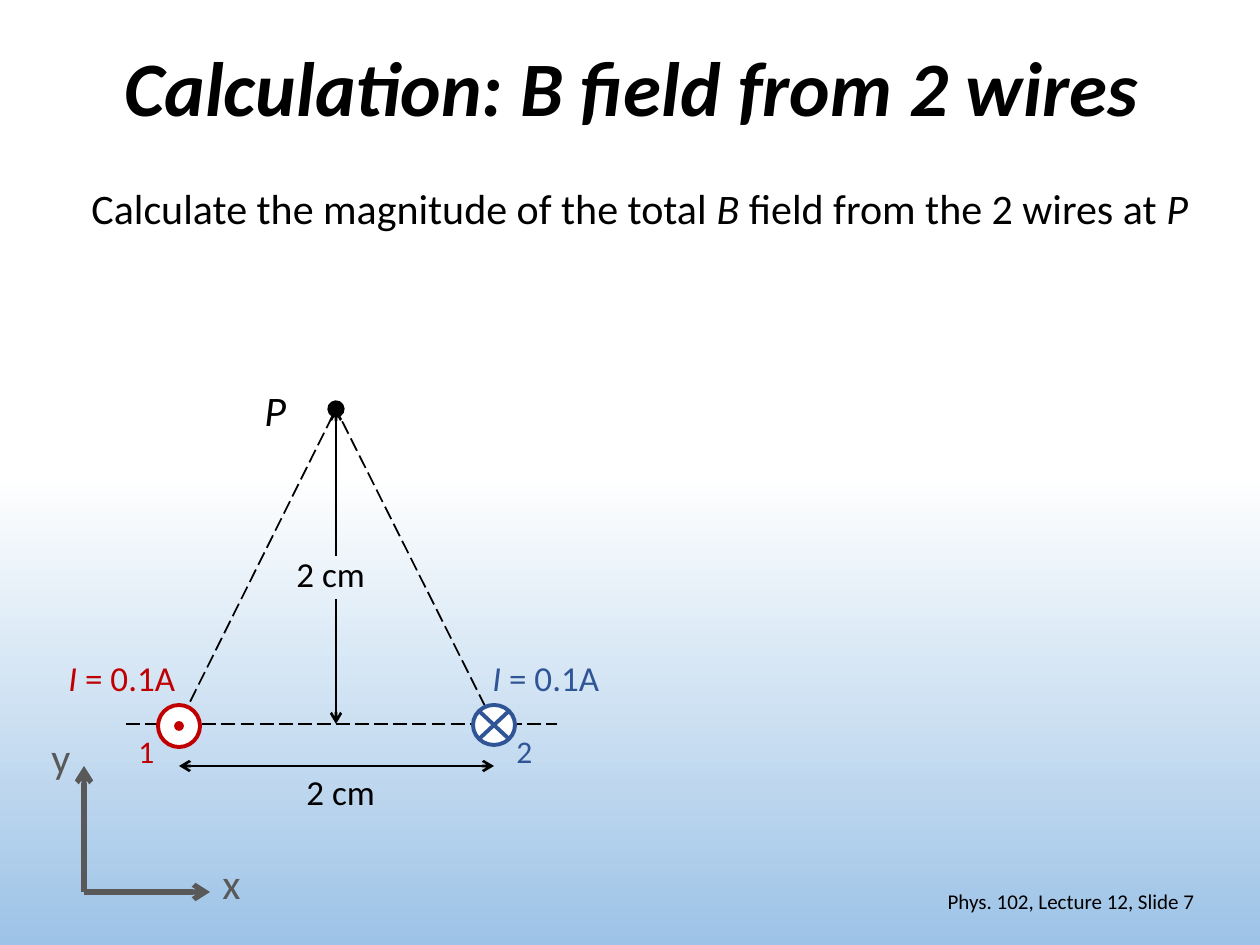
from lxml import etree
from pptx import Presentation
from pptx.dml.color import RGBColor
from pptx.enum.dml import MSO_LINE
from pptx.enum.shapes import MSO_CONNECTOR, MSO_SHAPE
from pptx.enum.text import MSO_ANCHOR, MSO_AUTO_SIZE, PP_ALIGN
from pptx.oxml.ns import qn
from pptx.util import Emu, Pt

STRAIGHT = MSO_CONNECTOR.STRAIGHT
OVAL = MSO_SHAPE.OVAL
LONG_DASH = MSO_LINE.LONG_DASH
MIDDLE = MSO_ANCHOR.MIDDLE
CENTER, RIGHT = PP_ALIGN.CENTER, PP_ALIGN.RIGHT
FIT_SHAPE = MSO_AUTO_SIZE.SHAPE_TO_FIT_TEXT

BLACK = RGBColor(0x00, 0x00, 0x00)
WHITE = RGBColor(0xFF, 0xFF, 0xFF)
SKY = RGBColor(0x9D, 0xC3, 0xE6)
RED = RGBColor(0xC0, 0x00, 0x00)
BLUE = RGBColor(0x2F, 0x55, 0x97)
GRAY = RGBColor(0x59, 0x59, 0x59)

FONT = "Calibri"
EMU_PER_PX = 914400 / 126

# Geometry of the problem, in px
WIRE_1_X, WIRE_2_X, WIRE_Y = 179, 494, 724
P_X, P_Y = (WIRE_1_X + WIRE_2_X) // 2, 409
ORIGIN_X, ORIGIN_Y, AXIS = 84, 892, 126


def px(n):
    return Emu(round(n * EMU_PER_PX))


def add_runs(p, runs, size, color, bold=None):
    """Each run is a pair of text and italic flag."""
    for text, italic in runs:
        r = p.add_run()
        r.text = text
        r.font.name = FONT
        r.font.size = Pt(size)
        r.font.color.rgb = color
        r.font.bold = bold
        r.font.italic = italic


def add_label(shapes, x, y, w, h, runs, size, color=BLACK):
    box = shapes.add_textbox(px(x), px(y), px(w), px(h))
    tf = box.text_frame
    tf.word_wrap = False
    tf.auto_size = FIT_SHAPE
    add_runs(tf.paragraphs[0], runs, size, color)


def add_line(shapes, start, end, color=BLACK, width=1, dash=None,
             head=None, tail=None, end_size="med"):
    line = shapes.add_connector(STRAIGHT, *map(px, start + end))
    line.line.color.rgb = color
    line.line.width = Pt(width)
    if dash:
        line.line.dash_style = dash
    sp_pr = line._element.spPr
    ln = sp_pr.find(qn("a:ln"))
    for tag, kind in (("a:headEnd", head), ("a:tailEnd", tail)):
        if kind:
            etree.SubElement(ln, qn(tag), type=kind, w=end_size, len=end_size)
    etree.SubElement(sp_pr, qn("a:effectLst"))


def add_circle(shapes, x, y, w, h, fill, color, width):
    s = shapes.add_shape(OVAL, px(x), px(y), px(w), px(h))
    s.shadow.inherit = False
    s.fill.solid()
    s.fill.fore_color.rgb = fill
    s.line.color.rgb = color
    s.line.width = Pt(width)


def add_background(slide):
    fill = slide.background.fill
    fill.gradient()
    fill.gradient_angle = 270
    for stop, position, color in zip(fill.gradient_stops, (0.5, 1), (WHITE, SKY)):
        stop.position = position
        stop.color.rgb = color


def add_title(slide, text):
    title = slide.shapes.title
    title.left, title.top, title.width, title.height = map(px, (89, 0, 1086, 183))
    tf = title.text_frame
    tf.word_wrap = True
    tf.vertical_anchor = MIDDLE
    p = tf.paragraphs[0]
    p.alignment = CENTER
    p.line_spacing = 0.9
    add_runs(p, [(text, True)], 44, BLACK, bold=True)


def add_footer(shapes, text):
    box = shapes.add_textbox(px(890), px(876), px(317), px(50))
    tf = box.text_frame
    tf.word_wrap = True
    tf.vertical_anchor = MIDDLE
    p = tf.paragraphs[0]
    p.alignment = RIGHT
    add_runs(p, [(text, False)], 12, BLACK)


def add_wire(slide, x, label_x, height, color):
    """Current label and wire circle; returns the group's shapes."""
    shapes = slide.shapes.add_group_shape().shapes
    add_label(shapes, label_x, 650, 134, 55, [("I ", True), ("= 0.1A", False)], 20, color)
    add_circle(shapes, x - 21, 705, 42, height, WHITE, color, 2.25)
    return shapes


def main():
    prs = Presentation()
    prs.slide_width, prs.slide_height = px(1260), px(945)
    slide = prs.slides.add_slide(prs.slide_layouts[5])
    shapes = slide.shapes
    add_background(slide)

    # Title and task
    add_title(slide, "Calculation: B field from 2 wires")
    add_label(shapes, 79, 176, 1131, 63,
              [("Calculate the magnitude of the total ", False), ("B", True),
               (" field from the 2 wires at ", False), ("P", True)], 24)

    # Dashed triangle with its apex at P
    apex = (P_X, P_Y)
    add_line(shapes, (126, WIRE_Y), (557, WIRE_Y), dash=LONG_DASH)
    add_line(shapes, (WIRE_2_X, WIRE_Y), apex, dash=LONG_DASH)
    add_line(shapes, apex, (WIRE_1_X, WIRE_Y), dash=LONG_DASH, head="oval", end_size="lg")

    # Wire 1: current out of the page
    wire_1 = add_wire(slide, WIRE_1_X, 56, 42, RED)
    add_circle(wire_1, WIRE_1_X - 4, 722, 8, 8, RED, RED, 1)

    # Wire 2: current into the page
    wire_2 = add_wire(slide, WIRE_2_X, 480, 40, BLUE)
    for dy in (-14, 14):
        add_line(wire_2, (WIRE_2_X - 15, 725 + dy), (WIRE_2_X + 15, 725 - dy), BLUE, 2.25)

    # Wire numbers, distances, axis names and P
    for text, x, y, w, h, size, color in (
            ("1", 126, 726, 42, 50, 18, RED),
            ("2", 504, 726, 42, 50, 18, BLUE),
            ("2 cm", 284, 546, 95, 55, 20, BLACK),
            ("2 cm", 294, 764, 95, 55, 20, BLACK),
            ("x", 210, 851, 44, 63, 24, GRAY),
            ("y", 39, 725, 44, 63, 24, GRAY),
            ("P", 252, 378, 48, 63, 24, BLACK)):
        add_label(shapes, x, y, w, h, [(text, text == "P")], size, color)

    # Dimension arrows
    add_line(shapes, (WIRE_1_X, 766), (WIRE_2_X, 766), width=1.5, head="arrow", tail="arrow")
    add_line(shapes, apex, (P_X, 556), width=1.5, head="arrow")
    add_line(shapes, (P_X, WIRE_Y), (P_X, 599), width=1.5, head="arrow")

    # Coordinate axes
    origin = (ORIGIN_X, ORIGIN_Y)
    for tip in ((ORIGIN_X, ORIGIN_Y - AXIS), (ORIGIN_X + AXIS, ORIGIN_Y)):
        add_line(shapes, origin, tip, GRAY, 3, tail="arrow")

    add_footer(shapes, "Phys. 102, Lecture 12, Slide 7")
    prs.save("out.pptx")


if __name__ == "__main__":
    main()
